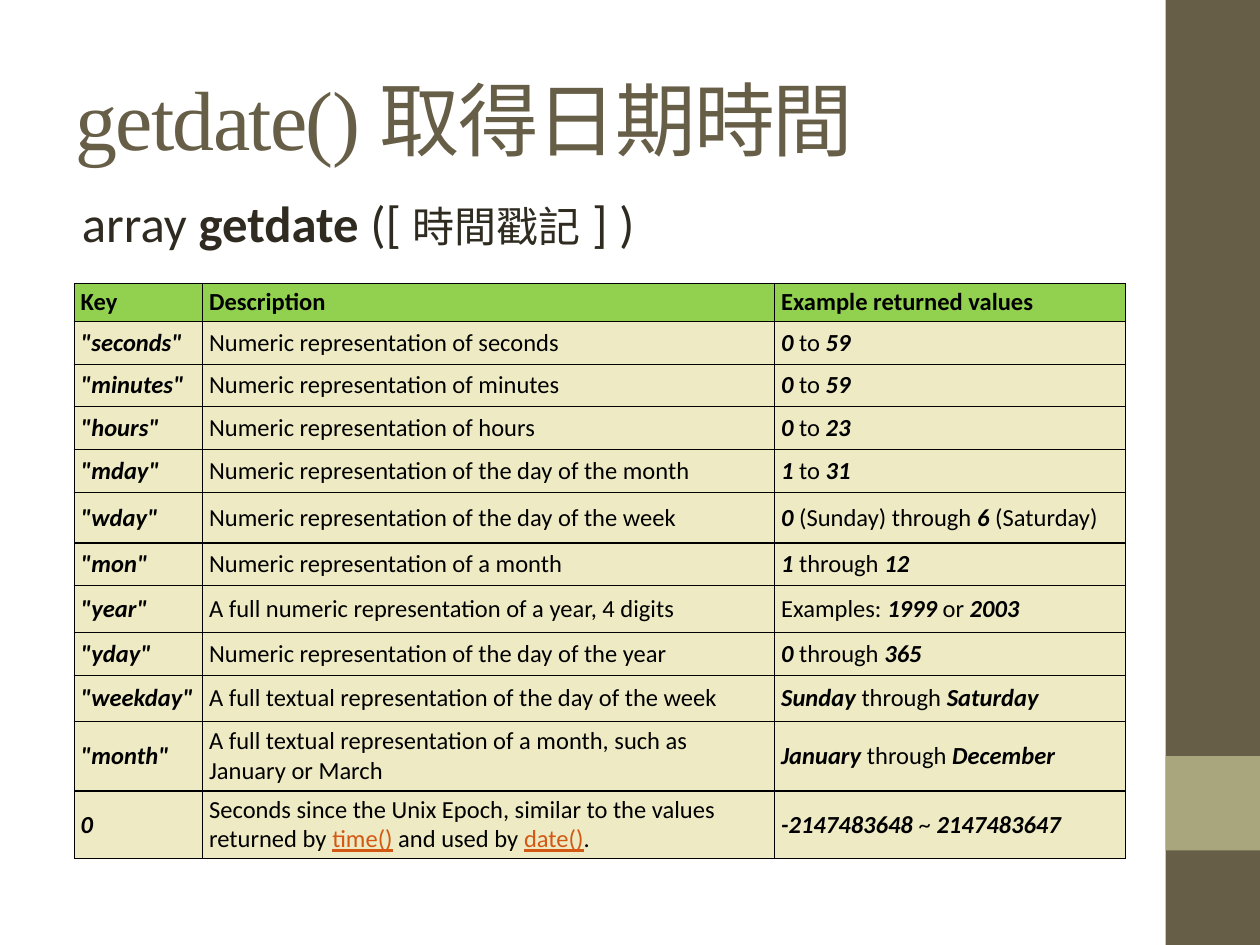
import pptx
import pptx.dml.color
import pptx.enum.shapes
import pptx.enum.text
import pptx.oxml.ns
import pptx.util
from dataclasses import dataclass
from lxml import etree

Inches = pptx.util.Inches
Pt = pptx.util.Pt
qn = pptx.oxml.ns.qn


@dataclass(frozen=True)
class Theme:
    body_font: str = "Calibri"
    title_font: str = "Times New Roman"
    brown: str = "675E47"
    olive: str = "A9A57C"
    dark: str = "2F2B20"
    black: str = "000000"
    header_fill: str = "92D050"
    row_fill: str = "EDEAC4"
    link: str = "D25814"
    title_size: float = 48
    title_chinese_size: float = 46
    body_size: float = 29
    body_chinese_size: float = 24
    table_size: float = 14
    border_width: float = 0.75


def rgb(value):
    return pptx.dml.color.RGBColor.from_string(value)


class SlideBuilder:
    def __init__(self, slide, theme):
        self.slide = slide
        self.theme = theme

    def set_font(self, font, name, size, color):
        font.name, font.size = name, Pt(size)
        font.color.rgb = rgb(color)

    def place(self, shape, left, top, width, height):
        shape.left, shape.top = Inches(left), Inches(top)
        shape.width, shape.height = Inches(width), Inches(height)

    def block(self, left, top, width, height, color):
        shape = self.slide.shapes.add_shape(
            pptx.enum.shapes.MSO_SHAPE.RECTANGLE,
            Inches(left), Inches(top), Inches(width), Inches(height))
        shape.shadow.inherit = False
        shape.fill.solid()
        shape.fill.fore_color.rgb = rgb(color)
        shape.line.fill.background()

    def title(self, runs, *box):
        shape = self.slide.shapes.title
        self.place(shape, *box)
        shape.text_frame.vertical_anchor = pptx.enum.text.MSO_ANCHOR.MIDDLE
        paragraph = shape.text_frame.paragraphs[0]
        paragraph.alignment = pptx.enum.text.PP_ALIGN.LEFT
        for text, size in runs:
            run = paragraph.add_run()
            run.text = text
            self.set_font(run.font, self.theme.title_font, size, self.theme.brown)
            run.font._element.set("spc", "-100")

    def body(self, runs, *box):
        shape = self.slide.placeholders[1]
        self.place(shape, *box)
        paragraph = shape.text_frame.paragraphs[0]
        properties = paragraph._p.get_or_add_pPr()
        properties.set("marL", str(Inches(0.12)))
        properties.set("indent", "0")
        etree.SubElement(properties, qn("a:buNone"))
        paragraph.space_before = Pt(0)
        for text, size, bold in runs:
            run = paragraph.add_run()
            run.text = text
            self.set_font(run.font, self.theme.body_font, size, self.theme.dark)
            run.font.bold = bold

    def border(self, cell):
        properties = cell._tc.get_or_add_tcPr()
        for position, side in enumerate(("a:lnL", "a:lnR", "a:lnT", "a:lnB")):
            line = etree.Element(qn(side), w=str(Pt(self.theme.border_width)))
            fill = etree.SubElement(line, qn("a:solidFill"))
            etree.SubElement(fill, qn("a:srgbClr"), val=self.theme.black)
            properties.insert(position, line)

    def cell(self, cell, text, fill, header):
        """Write a cell: *...* is bold italic, _..._ is link style."""
        cell.fill.solid()
        cell.fill.fore_color.rgb = rgb(fill)
        self.border(cell)
        cell.vertical_anchor = pptx.enum.text.MSO_ANCHOR.MIDDLE
        cell.margin_left = cell.margin_right = Inches(0.05)
        cell.margin_top = cell.margin_bottom = Inches(0.03)
        paragraph = cell.text_frame.paragraphs[0]
        self.set_font(paragraph.font, self.theme.body_font,
                      self.theme.table_size, self.theme.black)
        marker = "_" if "_" in text else "*"
        for position, part in enumerate(text.split(marker)):
            if not part:
                continue
            marked = position % 2 == 1
            strong = marked and marker == "*"
            linked = marked and marker == "_"
            run = paragraph.add_run()
            run.text = part
            color = self.theme.link if linked else self.theme.black
            self.set_font(run.font, self.theme.body_font, self.theme.table_size, color)
            run.font.bold = header or strong
            run.font.italic = strong
            run.font.underline = linked

    def table(self, rows, left, top, widths, heights):
        frame = self.slide.shapes.add_table(
            len(rows), len(widths), Inches(left), Inches(top),
            Inches(sum(widths)), Inches(sum(heights)))
        table = frame.table
        for column, width in zip(table.columns, widths):
            column.width = Inches(width)
        for index, (row, height) in enumerate(zip(rows, heights)):
            table.rows[index].height = Inches(height)
            header = index == 0
            fill = self.theme.header_fill if header else self.theme.row_fill
            for column, text in enumerate(row):
                self.cell(table.cell(index, column), text, fill, header)


NUMERIC = "Numeric representation of "
TEXTUAL = "A full textual representation of "

# Each row: key, description, example values, height in inches
ROWS = [
    ("Key", "Description", "Example returned values", 0.3),
    ('*"seconds"*', NUMERIC + "seconds", "*0* to *59*", 0.34),
    ('*"minutes"*', NUMERIC + "minutes", "*0* to *59*", 0.34),
    ('*"hours"*', NUMERIC + "hours", "*0* to *23*", 0.34),
    ('*"mday"*', NUMERIC + "the day of the month", "*1* to *31*", 0.34),
    ('*"wday"*', NUMERIC + "the day of the week",
     "*0* (Sunday) through *6* (Saturday)", 0.4),
    ('*"mon"*', NUMERIC + "a month", "*1* through *12*", 0.34),
    ('*"year"*', "A full numeric representation of a year, 4 digits",
     "Examples: *1999* or *2003*", 0.37),
    ('*"yday"*', NUMERIC + "the day of the year", "*0* through *365*", 0.34),
    ('*"weekday"*', TEXTUAL + "the day of the week",
     "*Sunday* through *Saturday*", 0.37),
    ('*"month"*', TEXTUAL + "a month, such as January or March",
     "*January* through *December*", 0.55),
    ("*0*", "Seconds since the Unix Epoch, similar to the values returned by "
     "_time()_ and used by _date()_.", "*-2147483648* ~ *2147483647*", 0.52),
]


def main():
    presentation = pptx.Presentation()
    presentation.slide_width, presentation.slide_height = Inches(10), Inches(7.5)
    slide = presentation.slides.add_slide(presentation.slide_layouts[1])
    theme = Theme()
    builder = SlideBuilder(slide, theme)

    # Side band
    builder.block(9.25, 0, 0.75, 7.5, theme.brown)
    builder.block(9.25, 6, 0.75, 0.75, theme.olive)

    # Title and function signature
    builder.title([("getdate() ", theme.title_size),
                   ("取得日期時間", theme.title_chinese_size)], 0.5, 0.3, 8.33, 1.25)
    builder.body([("array ", theme.body_size, False),
                  ("getdate", theme.body_size, True),
                  (" ([ ", theme.body_size, False),
                  ("時間戳記", theme.body_chinese_size, False),
                  (" ] )", theme.body_size, False)], 0.43, 1.47, 8.33, 5.25)

    # Returned array keys
    builder.table([row[:3] for row in ROWS], 0.59, 2.25,
                  [1.02, 4.54, 2.78], [row[3] for row in ROWS])
    presentation.save("out.pptx")


if __name__ == "__main__":
    main()
